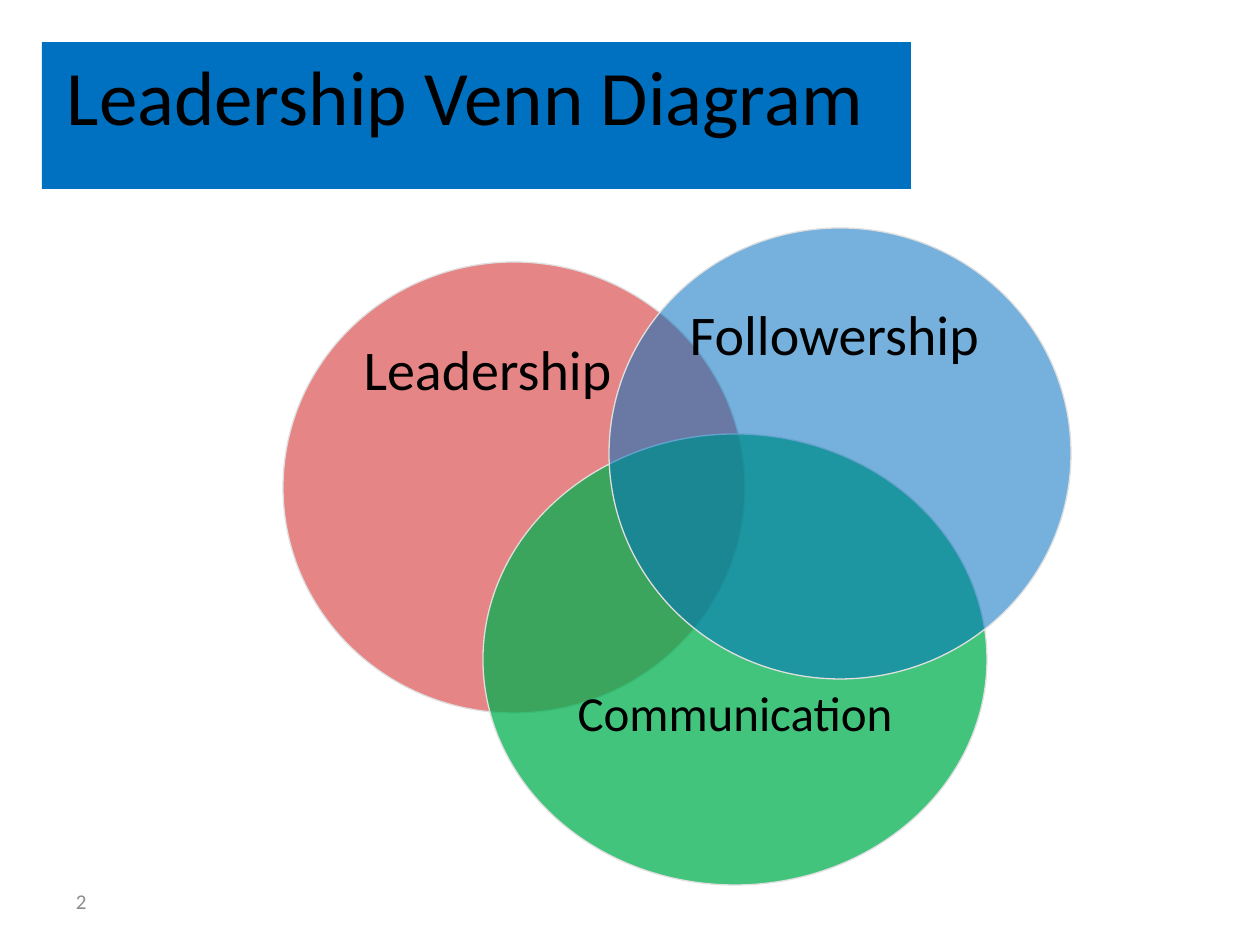
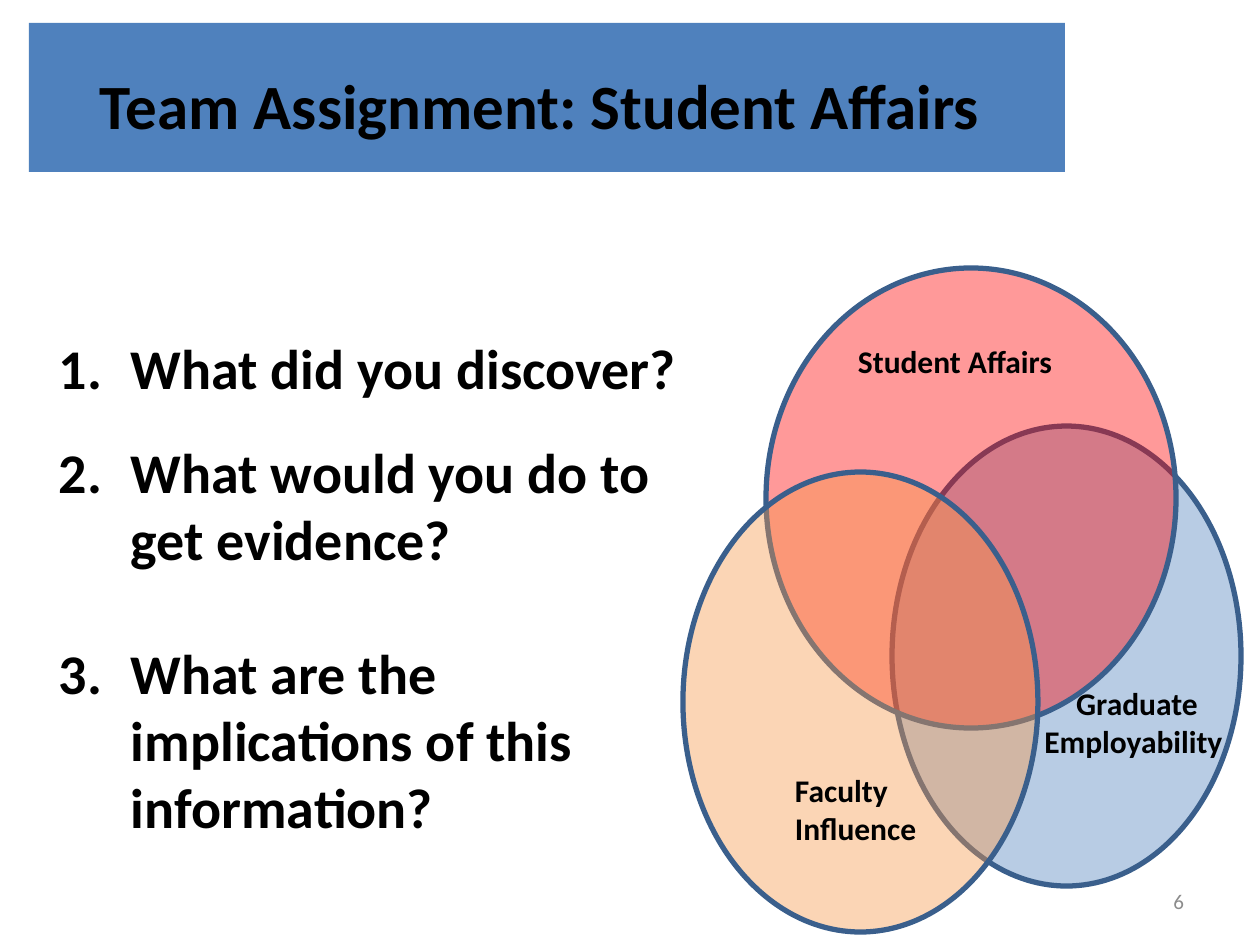
from pptx import Presentation
from pptx.dml.color import RGBColor as Rgb
from pptx.enum.shapes import MSO_SHAPE as Kind
from pptx.enum.text import MSO_ANCHOR as Anchor, PP_ALIGN as Align
from pptx.oxml.ns import qn
from pptx.util import Pt
from lxml.etree import SubElement as Sub

SCALE = 914400 / 126
FONT = "Calibri"
BLACK = "000000"
GREY = "8C8C8C"
BLUE = "0070C0"
STEEL = "4F81BD"
PALE = "DFDFDF"
NAVY = "3A5F8C"
INSET = (13, 6, 13, 6)


def px(num):
    return round(num * SCALE)


def paint(part, code, alpha=100):
    part.solid()
    part.fore_color.rgb = Rgb.from_string(code)
    if alpha < 100:
        tone = part._xPr.find(qn("a:solidFill"))[0]
        Sub(tone, qn("a:alpha")).set("val", str(alpha * 1000))


def set_frame(shape, inset=INSET, anchor=Anchor.TOP, wrap=True):
    frame = shape.text_frame
    frame.word_wrap = wrap
    frame.vertical_anchor = anchor
    (frame.margin_left, frame.margin_top,
     frame.margin_right, frame.margin_bottom) = map(px, inset)
    return frame


def add_run(para, text, size, bold=False, code=BLACK):
    run = para.add_run()
    run.text = text
    run.font.name = FONT
    run.font.size = Pt(size)
    run.font.bold = bold
    paint(run.font.fill, code)


def write(frame, lines, size, bold=False, code=BLACK, align=Align.LEFT, space=1):
    for i, line in enumerate(lines):
        para = frame.add_paragraph() if i else frame.paragraphs[0]
        para.alignment = align
        para.line_spacing = space
        add_run(para, line, size, bold, code)


def add_form(slide, kind, box, code, alpha=100, edge=None, width=1):
    form = slide.shapes.add_shape(kind, *map(px, box))
    form.shadow.inherit = False
    paint(form.fill, code, alpha)
    if edge:
        paint(form.line.fill, edge)
        form.line.width = Pt(width)
    else:
        form.line.fill.background()
    return form


def add_title(slide, box, text, code, size, bold=False, space=1, inset=INSET):
    band = add_form(slide, Kind.RECTANGLE, box, code)
    write(set_frame(band, inset), [text], size, bold, align=Align.CENTER, space=space)


def add_oval(slide, box, code, alpha, edge, width):
    return add_form(slide, Kind.OVAL, box, code, alpha, edge, width)


def add_label(slide, box, lines, align=Align.LEFT):
    area = slide.shapes.add_textbox(*map(px, box))
    write(set_frame(area, wrap=False), lines, 18, True, align=align)


def add_number(slide, left, text, align):
    area = slide.shapes.add_textbox(*map(px, (left, 876, 294, 50)))
    write(set_frame(area, anchor=Anchor.MIDDLE), [text], 12, code=GREY, align=align)


def add_list(slide, box, items, size, indent):
    frame = set_frame(slide.shapes.add_textbox(*map(px, box)))
    for i, (lines, before, space) in enumerate(items):
        para = frame.add_paragraph() if i else frame.paragraphs[0]
        para.space_before = Pt(before)
        para.line_spacing = space
        props = para._p.get_or_add_pPr()
        props.set("marL", str(px(indent)))
        props.set("indent", str(-px(indent)))
        Sub(props, qn("a:buFont")).set("typeface", "+mj-lt")
        Sub(props, qn("a:buAutoNum")).set("type", "arabicPeriod")
        for j, line in enumerate(lines):
            if j:
                para.add_line_break()
            add_run(para, line, size, True)


def add_venn(slide):
    add_number(slide, 63, "2", Align.LEFT)
    rings = [
        ((283, 262, 462, 451), "CC0000", 48, "Leadership", 32, Align.LEFT, 6),
        ((483, 434, 504, 451), "00B050", 74, "Communication", 28, Align.CENTER, 183),
        ((609, 228, 462, 451), BLUE, 54, "Followership", 32, Align.LEFT, 6),
    ]
    for box, code, alpha, text, size, align, top in rings:
        oval = add_oval(slide, box, code, alpha, PALE, 0.75)
        write(set_frame(oval, (13, top, 13, 6)), [text], size, align=align)
    add_title(slide, (42, 42, 869, 147), "Leadership Venn Diagram ", BLUE, 44,
              inset=(13, 6, 18, 6))


def add_task(slide):
    add_number(slide, 903, "6", Align.RIGHT)
    add_title(slide, (29, 23, 1036, 149), "Team Assignment: Student Affairs ",
              STEEL, 36, True, 1.5)
    add_oval(slide, (892, 426, 349, 460), STEEL, 40, NAVY, 3)
    add_oval(slide, (766, 268, 410, 460), "FF0000", 40, NAVY, 3)
    add_label(slide, (845, 336, 246, 50), ["Student Affairs"])
    add_label(slide, (1019, 678, 236, 89), ["Graduate", "Employability "], Align.CENTER)
    add_oval(slide, (683, 472, 355, 460), "F79646", 40, NAVY, 3)
    add_label(slide, (782, 765, 170, 89), ["Faculty", "Influence"])
    add_list(slide, (46, 294, 1165, 559), [
        (["What did you discover?"], 0, 1.5),
        (["What would you do to", "get evidence?"], 21, 1),
        (["What are the", "implications of this", "information?"], 38, 1),
    ], 32, 72)


def main():
    deck = Presentation()
    deck.slide_width, deck.slide_height = px(1260), px(945)
    for build in (add_venn, add_task):
        build(deck.slides.add_slide(deck.slide_layouts[6]))
    deck.save("out.pptx")


if __name__ == "__main__":
    main()
